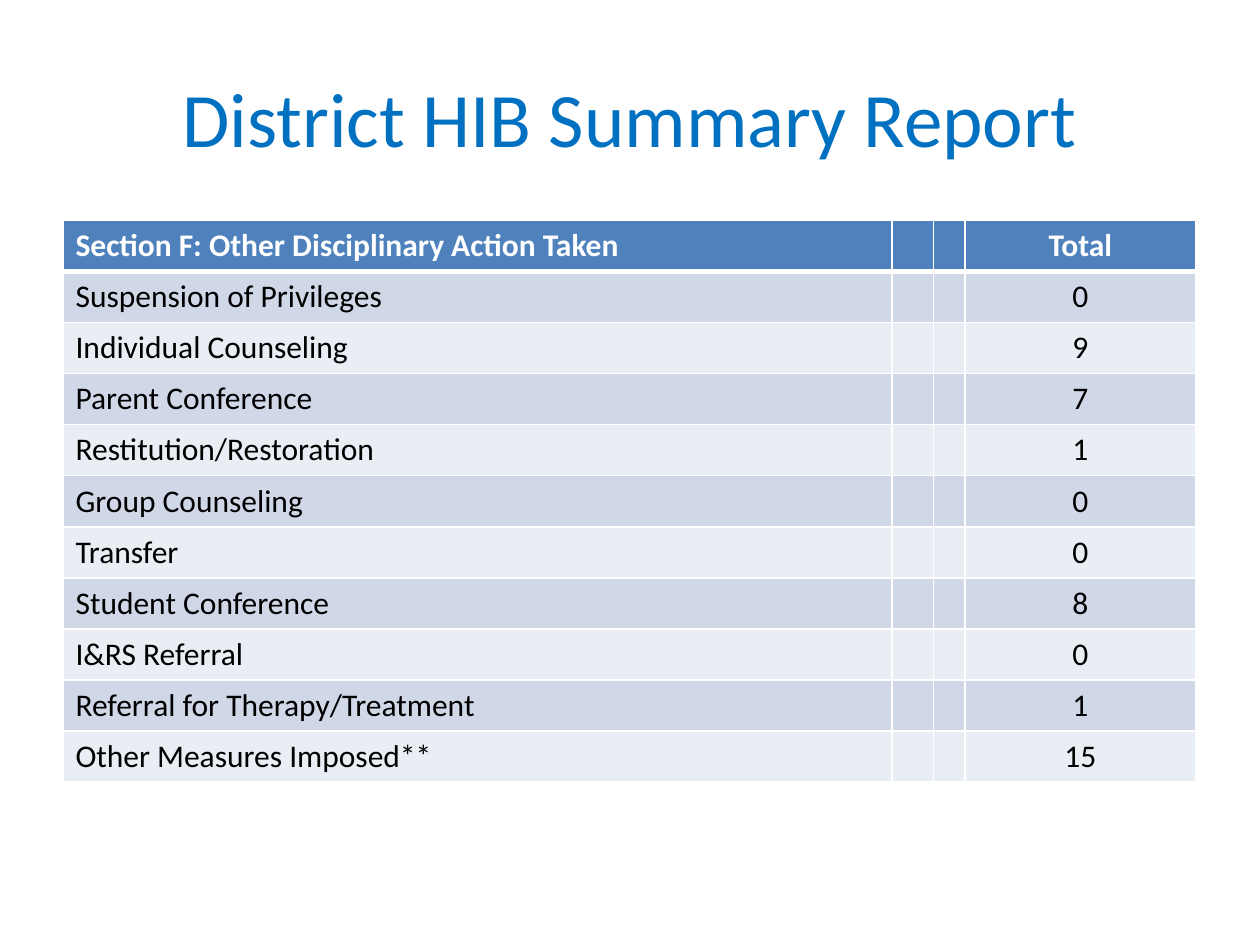
import pptx
import pptx.dml.color
import pptx.enum.text
import pptx.oxml
import pptx.oxml.ns
import pptx.util

RGBColor = pptx.dml.color.RGBColor
Alignment = pptx.enum.text.PP_ALIGN

TITLE_BLUE = RGBColor(0x00, 0x70, 0xC0)
HEADER_BLUE = RGBColor(0x4F, 0x81, 0xBD)
BAND_COLORS = (RGBColor(0xD0, 0xD8, 0xE8), RGBColor(0xE9, 0xED, 0xF4))
WHITE = RGBColor(0xFF, 0xFF, 0xFF)
BLACK = RGBColor(0x00, 0x00, 0x00)

HEADER = ("Section F: Other Disciplinary Action Taken", "", "", "Total")
ACTION_TOTALS = (
    ("Suspension of Privileges", 0),
    ("Individual Counseling", 9),
    ("Parent Conference", 7),
    ("Restitution/Restoration", 1),
    ("Group Counseling", 0),
    ("Transfer", 0),
    ("Student Conference", 8),
    ("I&RS Referral", 0),
    ("Referral for Therapy/Treatment", 1),
    ("Other Measures Imposed**", 15),
)


class ReportSlide:
    """Holds the style and the slide; lengths are shares of the slide's size."""

    font_name = "Calibri"
    title_size = 44
    table_size = 18

    def __init__(self, presentation):
        self.width = presentation.slide_width
        self.height = presentation.slide_height
        self.slide = presentation.slides.add_slide(presentation.slide_layouts[6])

    def place(self, left, top, width, height):
        return (int(left * self.width), int(top * self.height),
                int(width * self.width), int(height * self.height))

    def add_text(self, paragraph, text, size, color, alignment, bold=False):
        paragraph.alignment = alignment
        run = paragraph.add_run()
        run.text = text
        run.font.name = self.font_name
        run.font.size = pptx.util.Pt(size)
        run.font.bold = bold
        run.font.color.rgb = color

    def title(self, text, *area):
        frame = self.slide.shapes.add_textbox(*self.place(*area)).text_frame
        frame.word_wrap = True
        frame.vertical_anchor = pptx.enum.text.MSO_ANCHOR.MIDDLE
        self.add_text(frame.paragraphs[0], text, self.title_size, TITLE_BLUE,
                      Alignment.CENTER)

    def border(self, cell, side, points):
        line = pptx.oxml.parse_xml(
            f'<a:ln{side} {pptx.oxml.ns.nsdecls("a")} w="{pptx.util.Pt(points)}">'
            f'<a:solidFill><a:srgbClr val="{WHITE}"/></a:solidFill></a:ln{side}>')
        cell._tc.get_or_add_tcPr().append(line)

    def cell(self, cell, text, fill, color, alignment, bold, top, bottom):
        # Borders come before the fill in the cell's properties
        for side, points in (("L", 1), ("R", 1), ("T", top), ("B", bottom)):
            self.border(cell, side, points)
        cell.fill.solid()
        cell.fill.fore_color.rgb = fill
        paragraph = cell.text_frame.paragraphs[0]
        if text:
            self.add_text(paragraph, text, self.table_size, color, alignment, bold)
        else:
            paragraph.font.size = pptx.util.Pt(self.table_size)

    def table(self, rows, column_shares, *area):
        frame = self.slide.shapes.add_table(
            len(rows), len(column_shares), *self.place(*area))
        table = frame.table
        for column, share in zip(table.columns, column_shares):
            column.width = int(share * self.width)
        for row_index, row in enumerate(rows):
            is_header = row_index == 0
            fill = HEADER_BLUE if is_header else BAND_COLORS[(row_index - 1) % 2]
            for column_index, text in enumerate(row):
                self.cell(
                    table.cell(row_index, column_index), text, fill,
                    color=WHITE if is_header else BLACK,
                    alignment=Alignment.CENTER if column_index else Alignment.LEFT,
                    bold=is_header,
                    top=3 if row_index == 1 else 1,
                    bottom=3 if is_header else 1)


def main():
    presentation = pptx.Presentation()
    presentation.slide_width = pptx.util.Inches(10)
    presentation.slide_height = pptx.util.Inches(7.5)
    report = ReportSlide(presentation)

    # Title
    report.title("District HIB Summary Report", 0.05, 0.3 / 7.5, 0.9, 1.25 / 7.5)

    # Disciplinary actions with two narrow spacer columns
    rows = [HEADER] + [(action, "", "", str(total))
                       for action, total in ACTION_TOTALS]
    report.table(rows, (0.658, 0.033, 0.025, 0.183),
                 0.05, 1.75 / 7.5, 0.9, 4.46 / 7.5)

    presentation.save("out.pptx")


if __name__ == "__main__":
    main()
